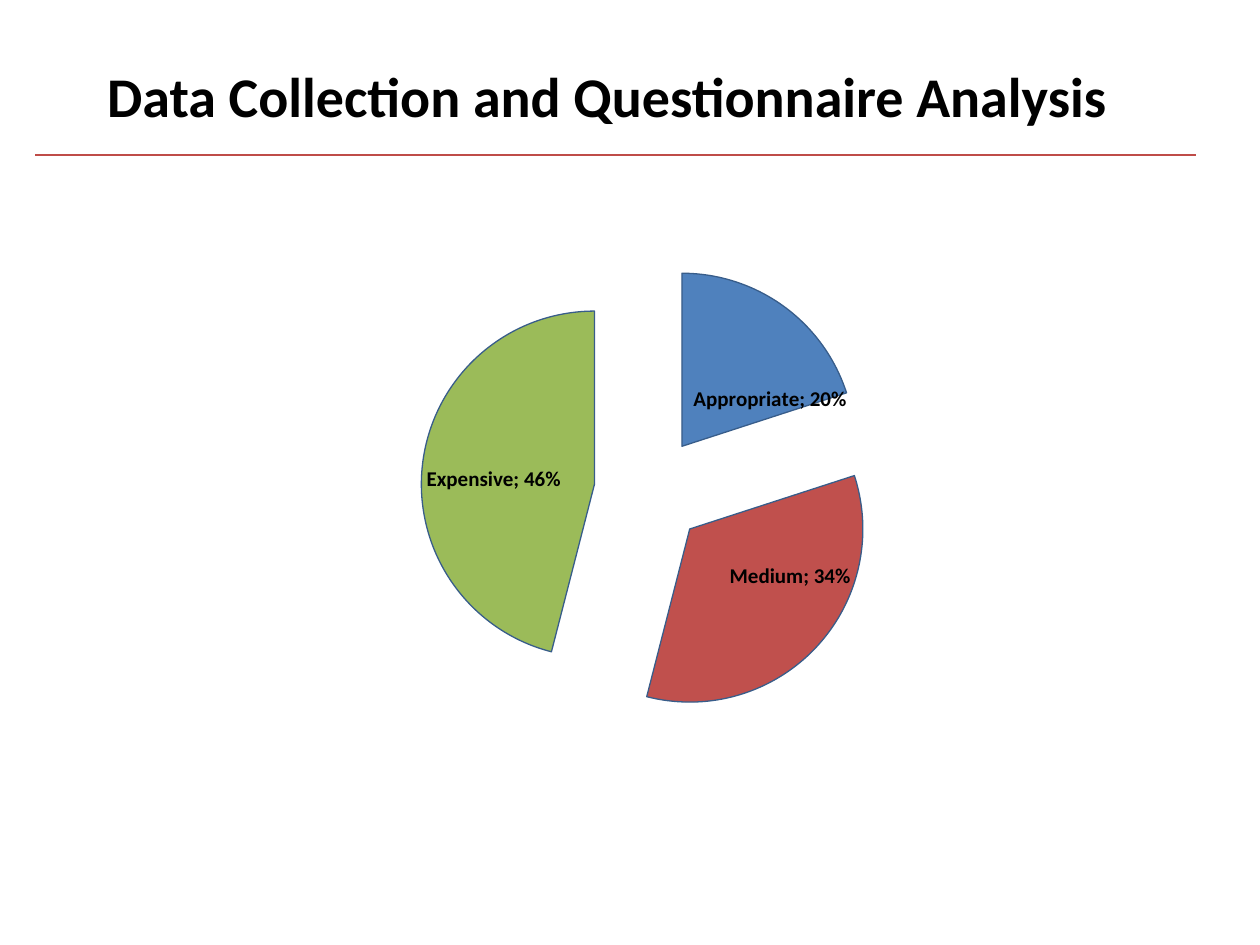
from lxml import etree
from pptx import Presentation
from pptx.chart.data import CategoryChartData
from pptx.dml.color import RGBColor
from pptx.enum.chart import XL_CHART_TYPE
from pptx.enum.shapes import MSO_CONNECTOR
from pptx.enum.text import MSO_ANCHOR, PP_ALIGN
from pptx.oxml import parse_xml
from pptx.oxml.ns import nsdecls, qn
from pptx.util import Inches, Pt

PIE = XL_CHART_TYPE.PIE
STRAIGHT = MSO_CONNECTOR.STRAIGHT
LEFT, TOP = PP_ALIGN.LEFT, MSO_ANCHOR.TOP

TITLE = "Data Collection and Questionnaire Analysis"
# answer, share, slice colour, label offset from slice centre (share of chart size)
ANSWERS = [
    ("Appropriate", 0.20, "4F81BD", (0.05, 0.04)),
    ("Medium", 0.34, "C0504D", (0.05, -0.02)),
    ("Expensive", 0.46, "9BBB59", (-0.02, 0.01)),
]
EXPLOSION = 32
PLOT_AREA = {"x": 0.1, "y": 0.1, "w": 0.81, "h": 0.78}

THEME = {
    "font": "Calibri", "text": "000000", "rule": "BF4C48", "outline": "385D8A",
    "title_size": 32, "label_size": 12, "line_width": 0.75,
}


def rgb(name):
    return RGBColor.from_string(THEME.get(name, name))


def style_font(font, size):
    font.name, font.size, font.bold = THEME["font"], Pt(THEME[size]), True
    font.color.rgb = rgb("text")


def style_line(line, color):
    line.color.rgb = rgb(color)
    line.width = Pt(THEME["line_width"])


def add_title(slide):
    title = slide.shapes.title
    title.left, title.top = Inches(0.75), Inches(0.44)
    title.width, title.height = Inches(8.43), Inches(0.64)
    frame = title.text_frame
    frame.word_wrap = True
    frame.vertical_anchor = TOP
    paragraph = frame.paragraphs[0]
    paragraph.alignment = LEFT
    run = paragraph.add_run()
    run.text = TITLE
    style_font(run.font, "title_size")


def add_rule(slide):
    rule = slide.shapes.add_connector(
        STRAIGHT, Inches(0.28), Inches(1.23), Inches(9.49), Inches(1.23))
    style_line(rule.line, "rule")
    etree.SubElement(rule._element.spPr, qn("a:effectLst"))


def manual_layout(values, target=""):
    modes = '<c:xMode val="edge"/><c:yMode val="edge"/>' if target else ""
    places = "".join(f'<c:{key} val="{value}"/>' for key, value in values.items())
    return parse_xml(f"<c:layout {nsdecls('c')}><c:manualLayout>{target}{modes}{places}"
                     "</c:manualLayout></c:layout>")


def label_content():
    """Settings shared by the series labels and each moved label."""
    flags = {"LegendKey": 0, "Val": 1, "CatName": 1, "SerName": 0,
             "Percent": 0, "BubbleSize": 0}
    shows = "".join(f'<c:show{key} val="{value}"/>' for key, value in flags.items())
    return list(parse_xml(
        f"<c:dLbls {nsdecls('c', 'a')}>"
        '<c:numFmt formatCode="0%" sourceLinked="0"/>'
        '<c:spPr><a:noFill/><a:ln><a:noFill/></a:ln></c:spPr>'
        f'<c:txPr><a:bodyPr/><a:p><a:pPr><a:defRPr sz="{THEME["label_size"] * 100}" b="1">'
        f'<a:solidFill><a:srgbClr val="{THEME["text"]}"/></a:solidFill>'
        f'<a:latin typeface="{THEME["font"]}"/></a:defRPr></a:pPr>'
        '<a:endParaRPr lang="en-US"/></a:p></c:txPr>'
        f'<c:dLblPos val="ctr"/>{shows}<c:separator>; </c:separator></c:dLbls>'))


def add_labels(series):
    labels = parse_xml(f"<c:dLbls {nsdecls('c')}/>")
    for index, (_, _, _, (dx, dy)) in enumerate(ANSWERS):
        label = etree.SubElement(labels, qn("c:dLbl"))
        etree.SubElement(label, qn("c:idx")).set("val", str(index))
        label.append(manual_layout({"x": dx, "y": dy}))
        label.extend(label_content())
    labels.extend(label_content())
    series._element.find(qn("c:cat")).addprevious(labels)


def add_answer_chart(slide):
    data = CategoryChartData(number_format="0%")
    data.categories = [answer for answer, *_ in ANSWERS]
    data.add_series("Series 1", [share for _, share, *_ in ANSWERS])
    chart = slide.shapes.add_chart(
        PIE, Inches(2.17), Inches(1.62), Inches(5.91), Inches(4.65), data).chart
    chart.has_title = chart.has_legend = False
    style_font(chart.font, "label_size")
    plot = chart.plots[0]
    plot.vary_by_categories = True
    series = plot.series[0]
    for index, (_, _, color, _) in enumerate(ANSWERS):
        slice_format = series.points[index].format
        slice_format.fill.solid()
        slice_format.fill.fore_color.rgb = rgb(color)
        style_line(slice_format.line, "outline")
    explosion = parse_xml(f'<c:explosion {nsdecls("c")} val="{EXPLOSION}"/>')
    series._element.find(qn("c:dPt")).addprevious(explosion)
    for point in series._element.findall(qn("c:dPt")):
        point.find(qn("c:spPr")).addprevious(
            parse_xml(f'<c:explosion {nsdecls("c")} val="{EXPLOSION}"/>'))
    add_labels(series)
    plot_area = chart._chartSpace.chart.plotArea
    for layout in plot_area.findall(qn("c:layout")):
        plot_area.remove(layout)
    plot_area.insert(0, manual_layout(PLOT_AREA, '<c:layoutTarget val="inner"/>'))


def main():
    deck = Presentation()
    deck.slide_width, deck.slide_height = Inches(10), Inches(7.5)
    slide = deck.slides.add_slide(deck.slide_layouts[5])
    add_title(slide)
    add_rule(slide)
    add_answer_chart(slide)
    deck.save("out.pptx")


if __name__ == "__main__":
    main()
